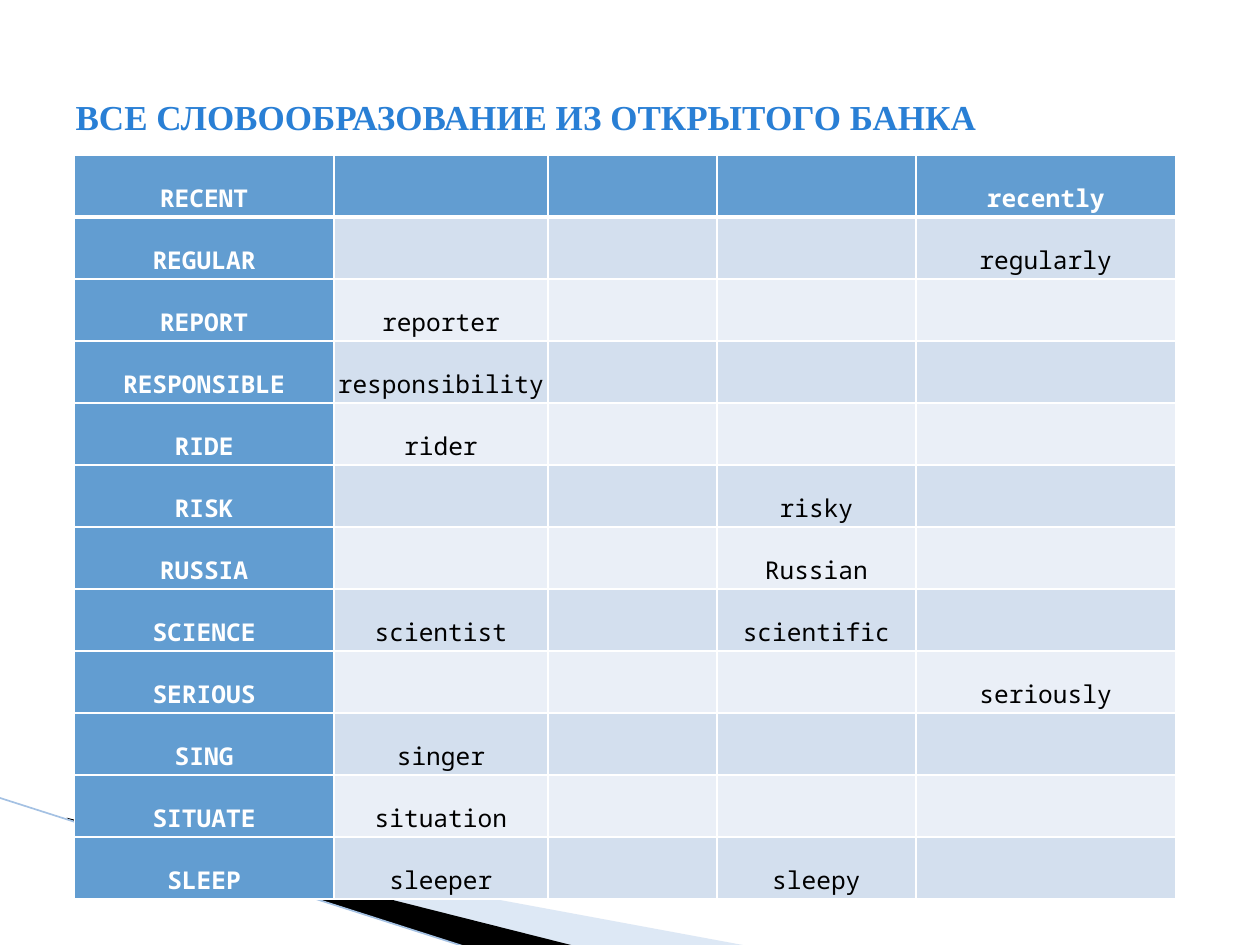
from lxml.etree import SubElement
from pptx import Presentation
from pptx.dml.color import RGBColor
from pptx.enum.shapes import MSO_CONNECTOR as Connector
from pptx.enum.text import MSO_ANCHOR as Anchor, PP_ALIGN as Align
from pptx.oxml.ns import qn
from pptx.util import Inches, Pt

COLORS = {
    "title": "297FD5", "head": "629DD1", "band": "D3DFEE", "plain": "EAEFF7",
    "white": "FFFFFF", "black": "000000", "wedge": "ABC6E6", "line": "A4C1E3",
}
WORDS = [
    ("RECENT", "", "", "", "recently"),
    ("REGULAR", "", "", "", "regularly"),
    ("REPORT", "reporter", "", "", ""),
    ("RESPONSIBLE", "responsibility", "", "", ""),
    ("RIDE", "rider", "", "", ""),
    ("RISK", "", "", "risky", ""),
    ("RUSSIA", "", "", "Russian", ""),
    ("SCIENCE", "scientist", "", "scientific", ""),
    ("SERIOUS", "", "", "", "seriously"),
    ("SING", "singer", "", "", ""),
    ("SITUATE", "situation", "", "", ""),
    ("SLEEP", "sleeper", "", "sleepy", ""),
]
COLUMN_SHARES = [206, 170, 134, 158, 206]
UNIT = Inches(0.01)


def color(name):
    return RGBColor.from_string(COLORS[name])


def grid(*steps):
    return [step * UNIT for step in steps]


def add_wedge(page, points, fill, opacity=None):
    builder = page.shapes.build_freeform(*points[0], scale=UNIT)
    builder.add_line_segments(points[1:])
    wedge = builder.convert_to_shape()
    wedge.shadow.inherit = False
    wedge.fill.solid()
    wedge.fill.fore_color.rgb = color(fill)
    wedge.line.fill.background()
    if opacity:
        tint = next(wedge.element.spPr.iter(qn("a:srgbClr")))
        SubElement(tint, qn("a:alpha"), val=str(opacity * 1000))


def add_corner(page, left, top, right, bottom):
    add_wedge(page, [(left + 2, top + 2), (right, bottom),
                     (right - 139, bottom), (left + 2, top + 1)], "wedge", 40)
    add_wedge(page, [(left, top), (right - 138, bottom),
                     (right - 223, bottom + 1), (left + 1, top + 1)], "black")
    edge = page.shapes.add_connector(
        Connector.STRAIGHT, *grid(-1, top - 16, right - 224, bottom + 1))
    edge.line.color.rgb = color("line")
    edge.line.width = Pt(0.95)
    SubElement(edge.element.spPr, qn("a:effectLst"))


def set_borders(cell, top, bottom):
    props = cell._tc.get_or_add_tcPr()
    for side, width in (("L", 1), ("R", 1), ("T", top), ("B", bottom)):
        border = SubElement(props, qn(f"a:ln{side}"), w=str(Pt(width)))
        fill = SubElement(border, qn("a:solidFill"))
        SubElement(fill, qn("a:srgbClr"), val=COLORS["white"])


def write_word(cell, word, is_head):
    cell.vertical_anchor = Anchor.BOTTOM
    cell.margin_left = cell.margin_right = Inches(0.03)
    cell.margin_top = cell.margin_bottom = Inches(0.02)
    cell.text_frame.text = word
    para = cell.text_frame.paragraphs[0]
    para.alignment = Align.CENTER
    para.line_spacing = 1.5
    font = para.runs[0].font
    font.name = "Noto Sans Mono"
    font.size = Pt(14)
    font.bold = is_head
    font.color.rgb = color("white" if is_head else "black")


def add_words(page, left, top, width, height):
    table = page.shapes.add_table(
        len(WORDS), len(COLUMN_SHARES), left, top, width, height).table
    table.first_col = True
    for column, share in zip(table.columns, COLUMN_SHARES):
        column.width = width * share // sum(COLUMN_SHARES)
    for row, words in enumerate(WORDS):
        table.rows[row].height = height // len(WORDS)
        for col, word in enumerate(words):
            cell = table.cell(row, col)
            is_head = row == 0 or col == 0
            set_borders(cell, 3 if row == 1 else 1, 3 if row == 0 else 1)
            cell.fill.solid()
            cell.fill.fore_color.rgb = color(
                "head" if is_head else "band" if row % 2 else "plain")
            if word:
                write_word(cell, word, is_head)


def place_title(page, left, top, width, height):
    title = page.shapes.title
    title.left, title.top, title.width, title.height = left, top, width, height
    title.text_frame.text = "ВСЕ СЛОВООБРАЗОВАНИЕ ИЗ ОТКРЫТОГО БАНКА"
    title.text_frame.vertical_anchor = Anchor.MIDDLE
    para = title.text_frame.paragraphs[0]
    para.alignment = Align.LEFT
    font = para.runs[0].font
    font.name = "Times New Roman"
    font.size = Pt(20)
    font.bold = True
    font.color.rgb = color("title")


def main():
    deck = Presentation()
    deck.slide_width, deck.slide_height = grid(1000, 750)
    page = deck.slides.add_slide(deck.slide_layouts[5])
    add_corner(page, 53, 649, 595, 751)
    add_words(page, *grid(59, 123, 874, 591))
    place_title(page, *grid(50, 30, 900, 125))
    deck.save("out.pptx")


if __name__ == "__main__":
    main()
